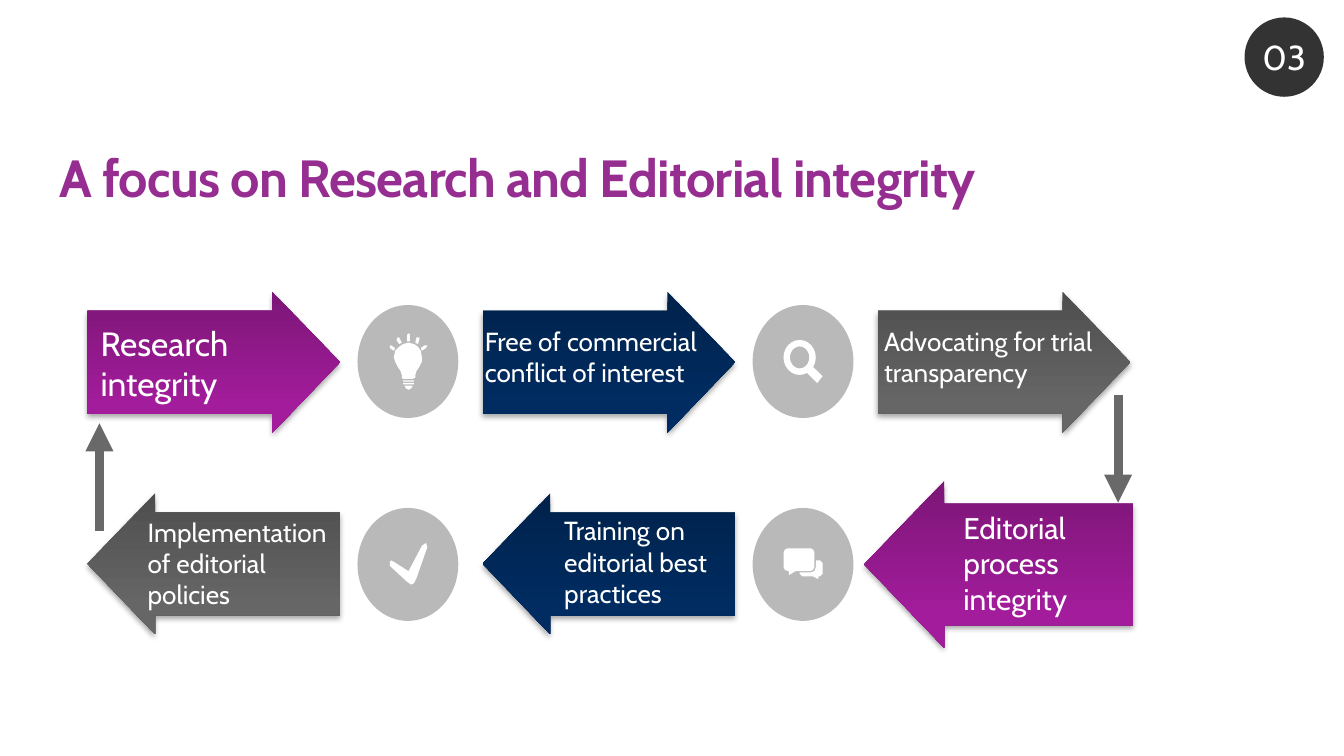
"""Build a slide showing the research and editorial integrity cycle."""
from lxml import etree
from pptx import Presentation
from pptx.dml.color import RGBColor
from pptx.enum import shapes, text
from pptx.oxml import ns
from pptx.util import Inches, Pt

PURPLE = RGBColor(0x96, 0x2D, 0x91)
WHITE = RGBColor(0xFF, 0xFF, 0xFF)
CHARCOAL = RGBColor(0x33, 0x33, 0x33)
SILVER = RGBColor(0xB9, 0xB9, 0xB9)
LINE_GREY = RGBColor(0x69, 0x69, 0x69)
PURPLE_BLEND = (RGBColor(0x7C, 0x16, 0x77), RGBColor(0xA2, 0x1C, 0x9B))
NAVY_BLEND = (RGBColor(0x00, 0x22, 0x4B), RGBColor(0x00, 0x2C, 0x61))
GREY_BLEND = (RGBColor(0x4E, 0x4E, 0x4E), RGBColor(0x66, 0x66, 0x66))
KIND = shapes.MSO_SHAPE


def write(shape, content, size=14, color=WHITE, bold=False,
          align=text.PP_ALIGN.LEFT, anchor=text.MSO_ANCHOR.TOP, spacing=None):
    frame = shape.text_frame
    frame.word_wrap = True
    frame.auto_size = text.MSO_AUTO_SIZE.NONE
    frame.vertical_anchor = anchor
    paragraph = frame.paragraphs[0]
    paragraph.alignment = align
    run = paragraph.add_run()
    run.text = content
    run.font.name = "Cabin"
    run.font.size = Pt(size)
    run.font.bold = bold
    run.font.color.rgb = color
    if spacing is not None:
        run.font._element.set("spc", str(round(spacing * 100)))


def paint(shape, color):
    shape.shadow.inherit = False
    shape.fill.solid()
    shape.fill.fore_color.rgb = color
    shape.line.fill.background()
    return shape


presentation = Presentation()
presentation.slide_width = Inches(10)
presentation.slide_height = presentation.slide_width * 9 // 16
slide = presentation.slides.add_slide(presentation.slide_layouts[5])

title = slide.shapes.title
title.left, title.top = Inches(0.34), Inches(1.03)
title.width, title.height = Inches(7.42), Inches(1.23)
write(title, "A focus on Research and Editorial integrity",
      size=28, color=PURPLE, bold=True, spacing=-0.4)

column_pitch = 2.94
for column in range(2):
    for top in (2.27, 3.78):
        paint(slide.shapes.add_shape(
            KIND.OVAL, Inches(2.66 + column * column_pitch), Inches(top),
            Inches(0.75), Inches(0.84)), SILVER)

lens = paint(slide.shapes.add_shape(
    KIND.DONUT, Inches(5.83), Inches(2.53), Inches(0.24), Inches(0.26)), WHITE)
lens.adjustments[0] = 0.2

bulb = [
    [(304, 255), (308, 256), (311, 258), (313, 261), (314, 266),
     (314, 269), (312, 273), (310, 276), (309, 279), (309, 281),
     (307, 282), (300, 282), (299, 281), (299, 279), (298, 276),
     (296, 273), (294, 269), (293, 266), (294, 261), (297, 258),
     (300, 256)],
    [(303, 249), (304, 248), (305, 249), (305, 254), (303, 254)],
    [(310, 251), (312, 251), (312, 253), (311, 256), (309, 255)],
    [(316, 257), (318, 257), (317, 259), (314, 261), (313, 259)],
    [(296, 251), (297, 251), (299, 255), (297, 256), (295, 253)],
    [(290, 257), (291, 257), (294, 259), (293, 261), (290, 259)],
    [(300, 283), (308, 283), (308, 284), (300, 284)],
    [(300, 285), (308, 285), (308, 286), (300, 286)],
    [(301, 287), (307, 287), (306, 289), (304, 290), (302, 289)],
]
lens_handle = [[(605, 273), (612, 280), (608, 285), (600, 277)]]
chat = [
    [(586, 408), (603, 408), (605, 409), (606, 411), (606, 422),
     (605, 424), (603, 425), (592, 425), (587, 428), (587, 425),
     (586, 425), (584, 424), (583, 422), (583, 411), (584, 409)],
    [(607, 417), (610, 417), (612, 419), (612, 427), (610, 429),
     (609, 429), (609, 431), (605, 429), (597, 429), (595, 427),
     (595, 426), (603, 426), (606, 425), (607, 422)],
]
check = [[(303, 433), (290, 421), (290, 418), (291, 417), (293, 418),
          (304, 425), (314, 406), (317, 404), (318, 407),
          (310, 430), (308, 434), (306, 435)]]
for first, *others in (bulb, lens_handle, chat, check):
    builder = slide.shapes.build_freeform(*first[0], scale=Inches(0.01))
    builder.add_line_segments(first[1:], close=True)
    for outline in others:
        builder.move_to(*outline[0])
        builder.add_line_segments(outline[1:], close=True)
    paint(builder.convert_to_shape(), WHITE)

arrows = [
    (KIND.RIGHT_ARROW, 0.65, 2.17, 1.88, 1.05, PURPLE_BLEND),
    (KIND.RIGHT_ARROW, 0.65 + column_pitch, 2.17, 1.88, 1.05, NAVY_BLEND),
    (KIND.RIGHT_ARROW, 0.65 + 2 * column_pitch, 2.17, 1.88, 1.05, GREY_BLEND),
    (KIND.LEFT_ARROW, 0.65, 3.67, 1.88, 1.05, GREY_BLEND),
    (KIND.LEFT_ARROW, 0.65 + column_pitch, 3.67, 1.88, 1.05, NAVY_BLEND),
    (KIND.LEFT_ARROW, 6.43, 3.58, 2, 1.24, PURPLE_BLEND),
]
for kind, left, top, width, height, blend in arrows:
    arrow = slide.shapes.add_shape(
        kind, Inches(left), Inches(top), Inches(width), Inches(height))
    arrow.adjustments[0] = 0.73
    arrow.adjustments[1] = 0.48
    arrow.line.fill.background()
    arrow.fill.gradient()
    arrow.fill.gradient_angle = 270
    for stop, color, position in zip(arrow.fill.gradient_stops, blend, (0, 0.8)):
        stop.color.rgb = color
        stop.position = position
    arrow.shadow.inherit = False
    effects = arrow._element.spPr.find(ns.qn("a:effectLst"))
    shadow = etree.SubElement(
        effects, ns.qn("a:outerShdw"), blurRad=str(Pt(3.1)), dist=str(Pt(1.8)),
        dir="5400000", rotWithShape="0")
    shade = etree.SubElement(shadow, ns.qn("a:srgbClr"), val="000000")
    etree.SubElement(shade, ns.qn("a:alpha"), val="35000")

for x, start, end in ((8.32, 2.94, 3.74), (0.74, 3.95, 3.15)):
    link = slide.shapes.add_connector(
        shapes.MSO_CONNECTOR.STRAIGHT, Inches(x), Inches(start), Inches(x), Inches(end))
    link.line.color.rgb = LINE_GREY
    link.line.width = Pt(5)
    etree.SubElement(link.line._get_or_add_ln(), ns.qn("a:tailEnd"), type="triangle")
    etree.SubElement(link._element.spPr, ns.qn("a:effectLst"))

labels = [
    ("Research integrity", 0.65, 2.35, 1.37, 0.71, 18),
    ("Free of commercial conflict of interest", 3.51, 2.37, 1.86, 0.57, 14),
    ("Advocating for trial transparency", 6.48, 2.37, 1.86, 0.57, 14),
    ("Implementation of editorial policies", 1, 3.79, 1.65, 0.81, 14),
    ("Training on editorial best practices", 4.1, 3.78, 1.77, 0.81, 14),
    ("Editorial process integrity", 7.07, 3.74, 1.28, 0.91, 16),
]
for content, left, top, width, height, size in labels:
    label = slide.shapes.add_textbox(
        Inches(left), Inches(top), Inches(width), Inches(height))
    write(label, content, size=size)

badge = paint(slide.shapes.add_shape(
    KIND.OVAL, Inches(9.26), Inches(0.13), Inches(0.59), Inches(0.59)), CHARCOAL)
frame = badge.text_frame
frame.margin_left = frame.margin_right = frame.margin_top = frame.margin_bottom = 0
write(badge, "03", size=18.5, align=text.PP_ALIGN.CENTER, anchor=text.MSO_ANCHOR.MIDDLE)

presentation.save("out.pptx")
